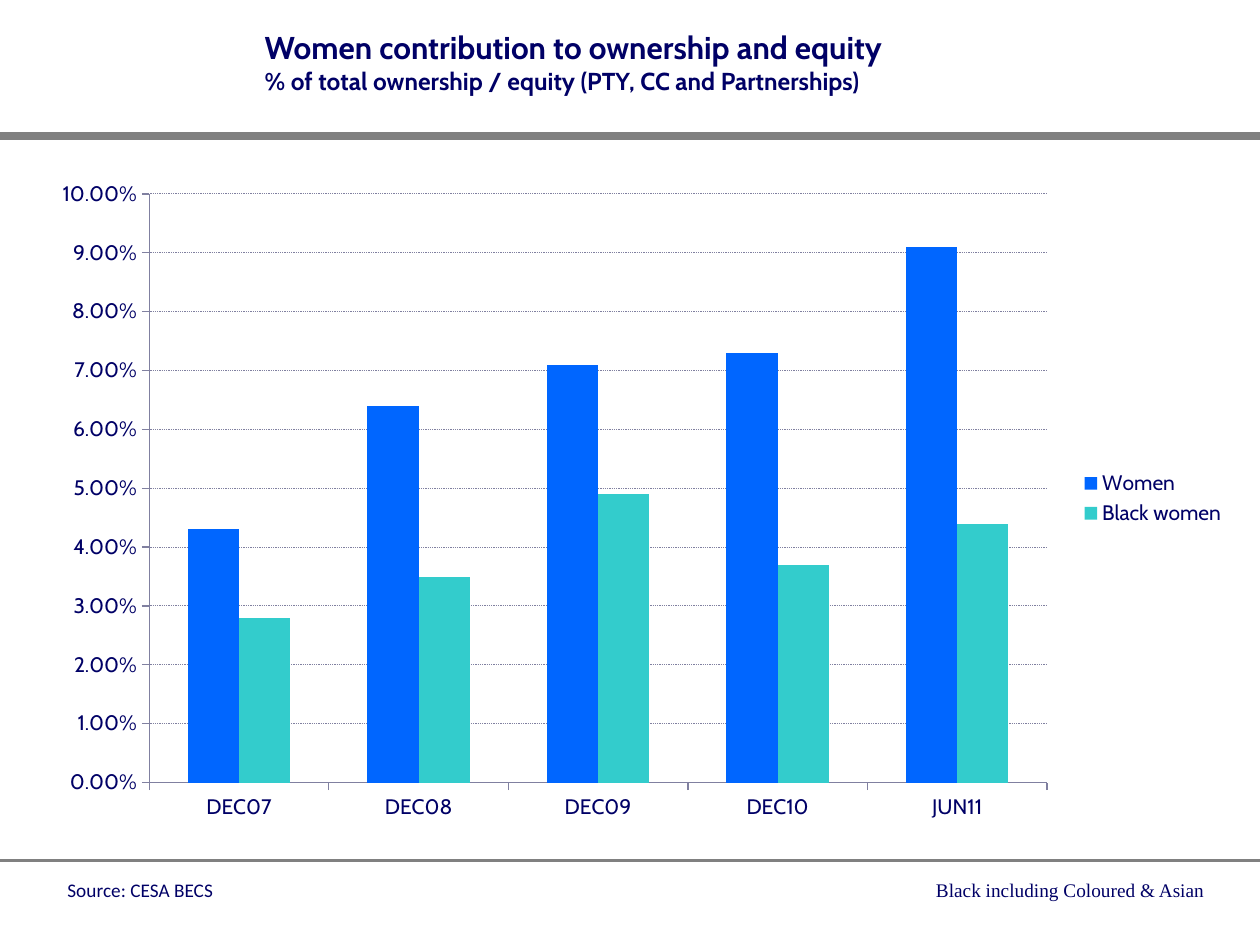
from lxml import etree
from pptx import Presentation
from pptx.chart.data import CategoryChartData
from pptx.dml.color import RGBColor
from pptx.enum.chart import XL_CHART_TYPE, XL_LEGEND_POSITION, XL_TICK_MARK
from pptx.enum.dml import MSO_LINE
from pptx.enum.shapes import MSO_CONNECTOR
from pptx.enum.text import MSO_ANCHOR, MSO_AUTO_SIZE, PP_ALIGN
from pptx.oxml.ns import qn
from pptx.util import Inches, Pt

COLUMNS = XL_CHART_TYPE.COLUMN_CLUSTERED
RIGHT_LEGEND = XL_LEGEND_POSITION.RIGHT
OUTSIDE = XL_TICK_MARK.OUTSIDE
DOTTED = MSO_LINE.ROUND_DOT
STRAIGHT = MSO_CONNECTOR.STRAIGHT
TOP = MSO_ANCHOR.TOP
FIXED, GROW = MSO_AUTO_SIZE.NONE, MSO_AUTO_SIZE.SHAPE_TO_FIT_TEXT
LEFT, RIGHT = PP_ALIGN.LEFT, PP_ALIGN.RIGHT

COLORS = {"navy": "000066", "rule": "808080", "axis": "8080A0",
          "women": "0066FF", "black_women": "33CCCC"}


def color(key):
    return RGBColor.from_string(COLORS[key])


def add_text(paragraph, text, font_name, size, bold=False):
    run = paragraph.add_run()
    run.text = text
    run.font.name = font_name
    run.font.size = Pt(size)
    run.font.bold = bold
    run.font.color.rgb = color("navy")


prs = Presentation()
prs.slide_width, prs.slide_height = Inches(10), Inches(7.5)
slide = prs.slides.add_slide(prs.slide_layouts[5])

for y, weight in ((1.08, 5), (6.83, 2)):
    rule = slide.shapes.add_connector(STRAIGHT, 0, Inches(y), Inches(10), Inches(y))
    rule.line.color.rgb = color("rule")
    rule.line.width = Pt(weight)
    etree.SubElement(rule._element.spPr, qn("a:effectLst"))

title = slide.shapes.title
title.left, title.top = Inches(2), Inches(0.17)
title.width, title.height = Inches(7.75), Inches(0.64)
heading = title.text_frame
heading.auto_size = FIXED
heading.vertical_anchor = TOP
heading_lines = (("Women contribution to ownership and equity", 18),
                 ("% of total ownership / equity (PTY, CC and Partnerships)", 14))
for i, (text, size) in enumerate(heading_lines):
    line = heading.add_paragraph() if i else heading.paragraphs[0]
    line.alignment = LEFT
    add_text(line, text, "Cabin", size, True)

shares = CategoryChartData(number_format="0%")
shares.categories = ["DEC07", "DEC08", "DEC09", "DEC10", "JUN11"]
shares.add_series("Women", (0.043, 0.064, 0.071, 0.073, 0.091))
shares.add_series("Black women", (0.028, 0.035, 0.049, 0.037, 0.044))
chart = slide.shapes.add_chart(COLUMNS, Inches(0.33), Inches(1.33),
                               Inches(9.5), Inches(5.25), shares).chart
chart.has_title = False
chart.font.name = "Cabin"
chart.font.size = Pt(12)
chart.font.color.rgb = color("navy")
chart.has_legend = True
chart.legend.position = RIGHT_LEGEND
chart.legend.include_in_layout = False
chart.legend.font.size = Pt(12)

plot = chart.plots[0]
plot.gap_width = 150
plot.overlap = 0
plot.vary_by_categories = False
for series, key in zip(plot.series, ("women", "black_women")):
    series.format.fill.solid()
    series.format.fill.fore_color.rgb = color(key)

for axis in (chart.category_axis, chart.value_axis):
    axis.major_tick_mark = OUTSIDE
    axis.format.line.color.rgb = color("axis")
    axis.format.line.width = Pt(0.75)
    axis.tick_labels.font.size = Pt(12)

percent = chart.value_axis
percent.minimum_scale, percent.maximum_scale, percent.major_unit = 0, 0.1, 0.01
percent.tick_labels.number_format = "0.00%"
percent.tick_labels.number_format_is_linked = False
gridline = percent.major_gridlines.format.line
gridline.color.rgb = color("axis")
gridline.width = Pt(0.5)
gridline.dash_style = DOTTED

plot_area = chart._chartSpace.chart.plotArea
for old_layout in plot_area.findall(qn("c:layout")):
    plot_area.remove(old_layout)
layout = etree.Element(qn("c:layout"))
plot_area.insert(0, layout)
manual = etree.SubElement(layout, qn("c:manualLayout"))
for tag, value in (("layoutTarget", "inner"), ("xMode", "edge"), ("yMode", "edge"),
                   ("x", "0.09"), ("y", "0.04"), ("w", "0.75"), ("h", "0.89")):
    etree.SubElement(manual, qn(f"c:{tag}")).set("val", value)

footnotes = (("Black including Coloured & Asian", "Times New Roman", 7.33, 2.35, LEFT),
             ("Source: CESA BECS", "Calibri", 0.42, 1.37, RIGHT))
for text, font_name, left, width, alignment in footnotes:
    footnote = slide.shapes.add_textbox(Inches(left), Inches(6.92),
                                        Inches(width), Inches(0.29)).text_frame
    footnote.word_wrap = False
    footnote.auto_size = GROW
    footnote.paragraphs[0].alignment = alignment
    add_text(footnote.paragraphs[0], text, font_name, 11)

prs.save("out.pptx")
